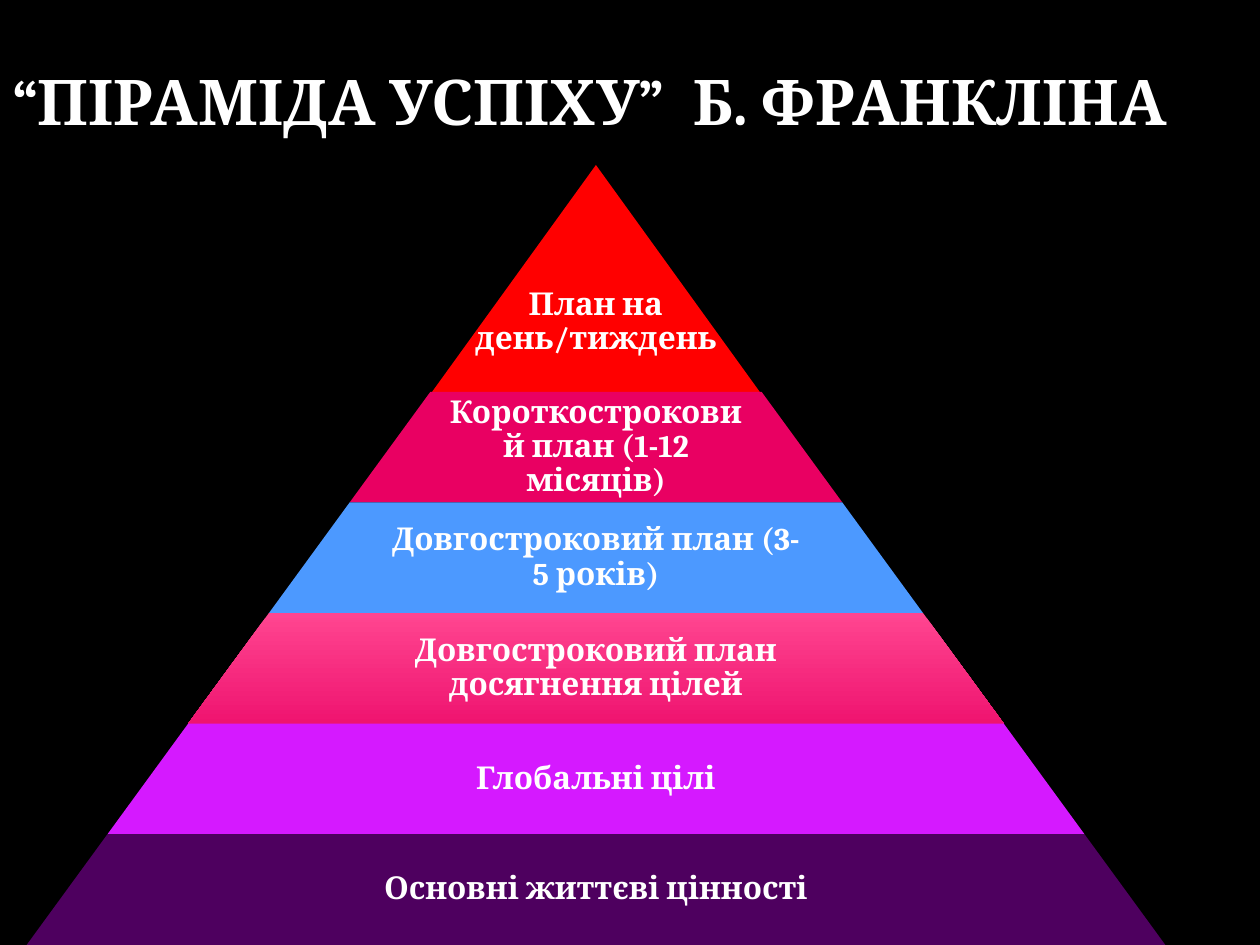
from pptx import Presentation, util as u
from pptx.dml.color import RGBColor
from pptx.enum import shapes, text

W, H = 10, 7.5
FONT = "Cambria"
COLORS = {
    "background": "000000", "text": "FFFFFF", "day": "FF0000",
    "short": "E90062", "long": "4C99FF", "goals_top": "FF4590",
    "goals_bottom": "EF1470", "global": "D519FF", "values": "4E005F",
}
# Label and one fill colour, or two for a vertical gradient; top to bottom
LEVELS = [
    ("План на день/тиждень", ["day"]),
    ("Короткостроковий план (1-12 місяців)", ["short"]),
    ("Довгостроковий план (3-5 років)", ["long"]),
    ("Довгостроковий план досягнення цілей", ["goals_top", "goals_bottom"]),
    ("Глобальні цілі", ["global"]),
    ("Основні життєві цінності", ["values"]),
]
CENTER = 4.73
APEX = 1.31
TIP_W, TIP_H = 2.6, 1.8
BAND_H = (H - APEX - TIP_H) / (len(LEVELS) - 1)
SLOPE = 0.73  # horizontal run of a side per unit of height
LABEL_SHARE = 0.65
INSET = 0.03


def rgb(name):
    return RGBColor.from_string(COLORS[name])


def add_run(p, words, size):
    r = p.add_run()
    r.text = words
    r.font.name = FONT
    r.font.size = u.Pt(size)
    r.font.bold = True
    r.font.color.rgb = rgb("text")


def centered_box(top, width, height):
    return [u.Inches(v) for v in (CENTER - width / 2, top, width, height)]


def add_title(s, words):
    sp = s.shapes.title
    sp.left, sp.top, sp.width, sp.height = 0, 0, u.Inches(W), u.Inches(1.59)
    tf = sp.text_frame
    tf.vertical_anchor = text.MSO_ANCHOR.MIDDLE
    p = tf.paragraphs[0]
    p.alignment = text.PP_ALIGN.LEFT
    add_run(p, words, 36)


def add_band(s, top, width, height, colors):
    sp = s.shapes.add_shape(shapes.MSO_SHAPE.TRAPEZOID,
                            *centered_box(top, width, height))
    sp.adjustments[0] = SLOPE
    sp.shadow.inherit = False
    sp.line.fill.background()
    if len(colors) == 1:
        sp.fill.solid()
        sp.fill.fore_color.rgb = rgb(colors[0])
        return
    sp.fill.gradient()
    sp.fill.gradient_angle = 270
    for stop, name in zip(sp.fill.gradient_stops, colors):
        stop.color.rgb = rgb(name)


def add_label(s, top, width, height, words, top_inset=INSET):
    tf = s.shapes.add_textbox(*centered_box(top, width, height)).text_frame
    tf.word_wrap = True
    tf.vertical_anchor = text.MSO_ANCHOR.MIDDLE
    tf.margin_left = tf.margin_right = tf.margin_bottom = u.Inches(INSET)
    tf.margin_top = u.Inches(top_inset)
    p = tf.paragraphs[0]
    p.alignment = text.PP_ALIGN.CENTER
    p.line_spacing = 0.9
    add_run(p, words, 18)


def add_pyramid(s):
    top = APEX
    for i, (words, colors) in enumerate(LEVELS):
        if i == 0:
            width, height = TIP_W, TIP_H
            label_width, top_inset = TIP_W, 0.4 * TIP_H
        else:
            height = BAND_H
            width = 2 * SLOPE * (top + height - APEX)
            label_width, top_inset = LABEL_SHARE * width, INSET
        add_band(s, top, width, height, colors)
        add_label(s, top, label_width, height, words, top_inset)
        top += height


def main():
    prs = Presentation()
    prs.slide_width, prs.slide_height = u.Inches(W), u.Inches(H)
    s = prs.slides.add_slide(prs.slide_layouts[5])
    s.background.fill.solid()
    s.background.fill.fore_color.rgb = rgb("background")
    add_title(s, "“ПІРАМІДА УСПІХУ”  Б. ФРАНКЛІНА")
    add_pyramid(s)
    prs.save("out.pptx")


if __name__ == "__main__":
    main()
